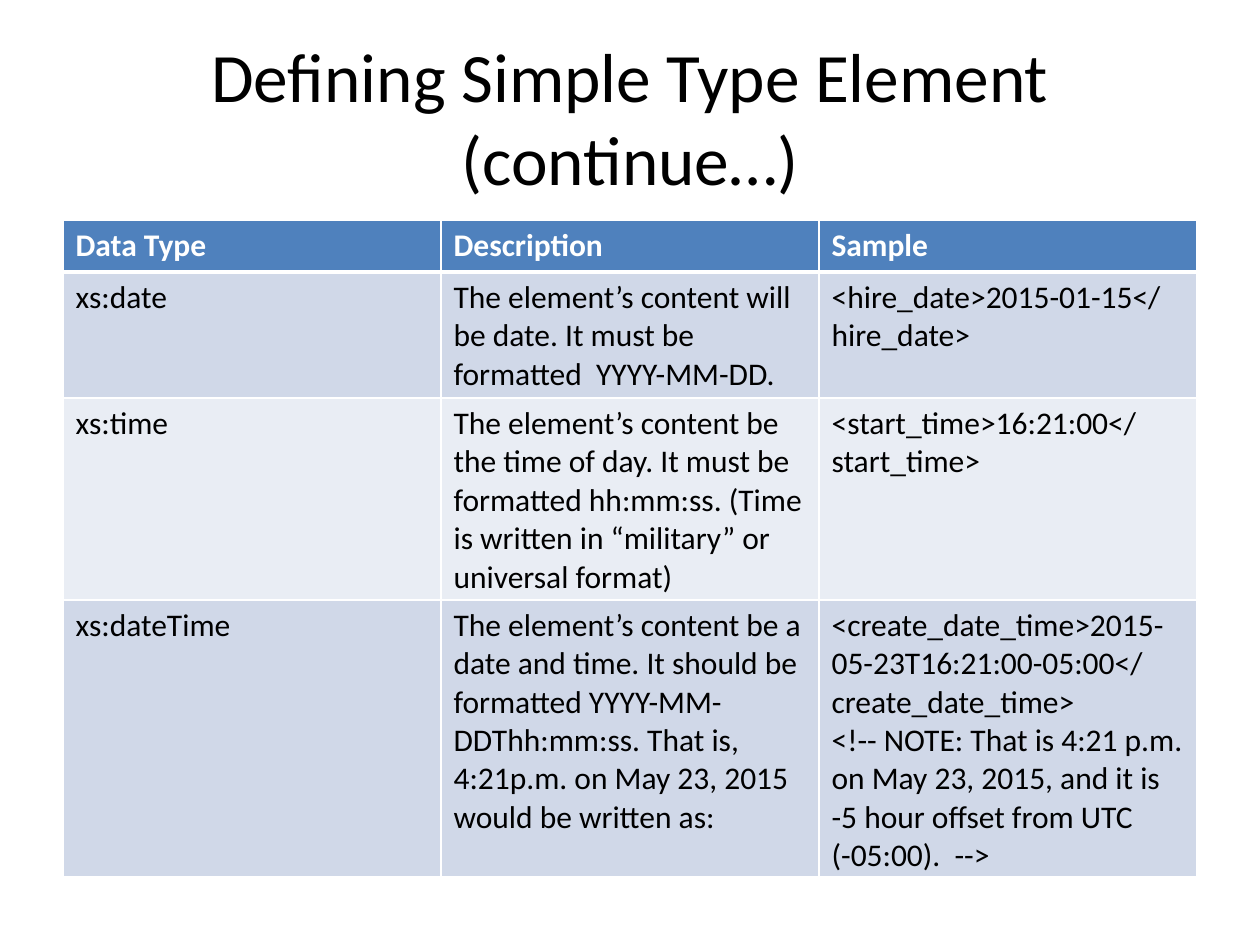
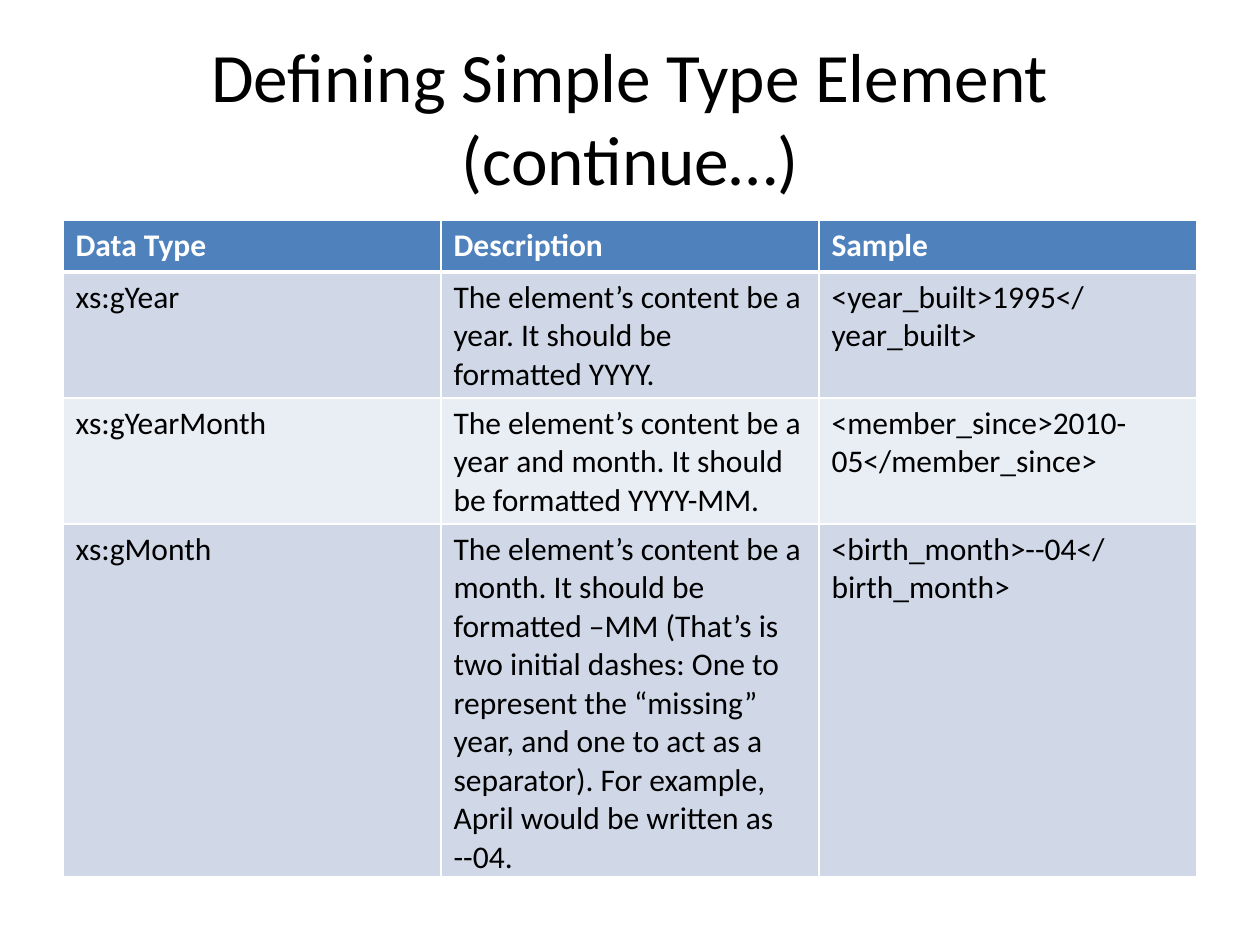
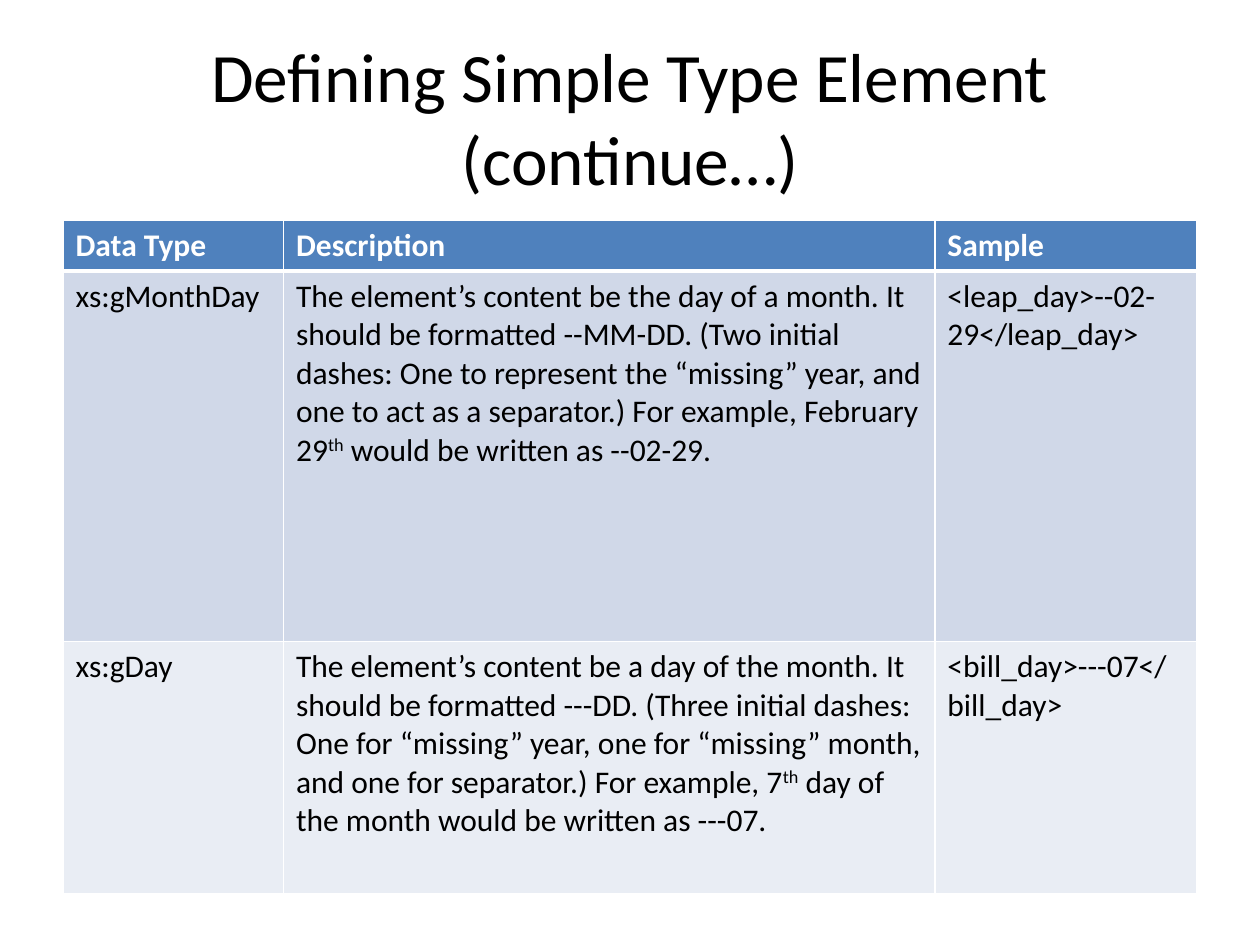
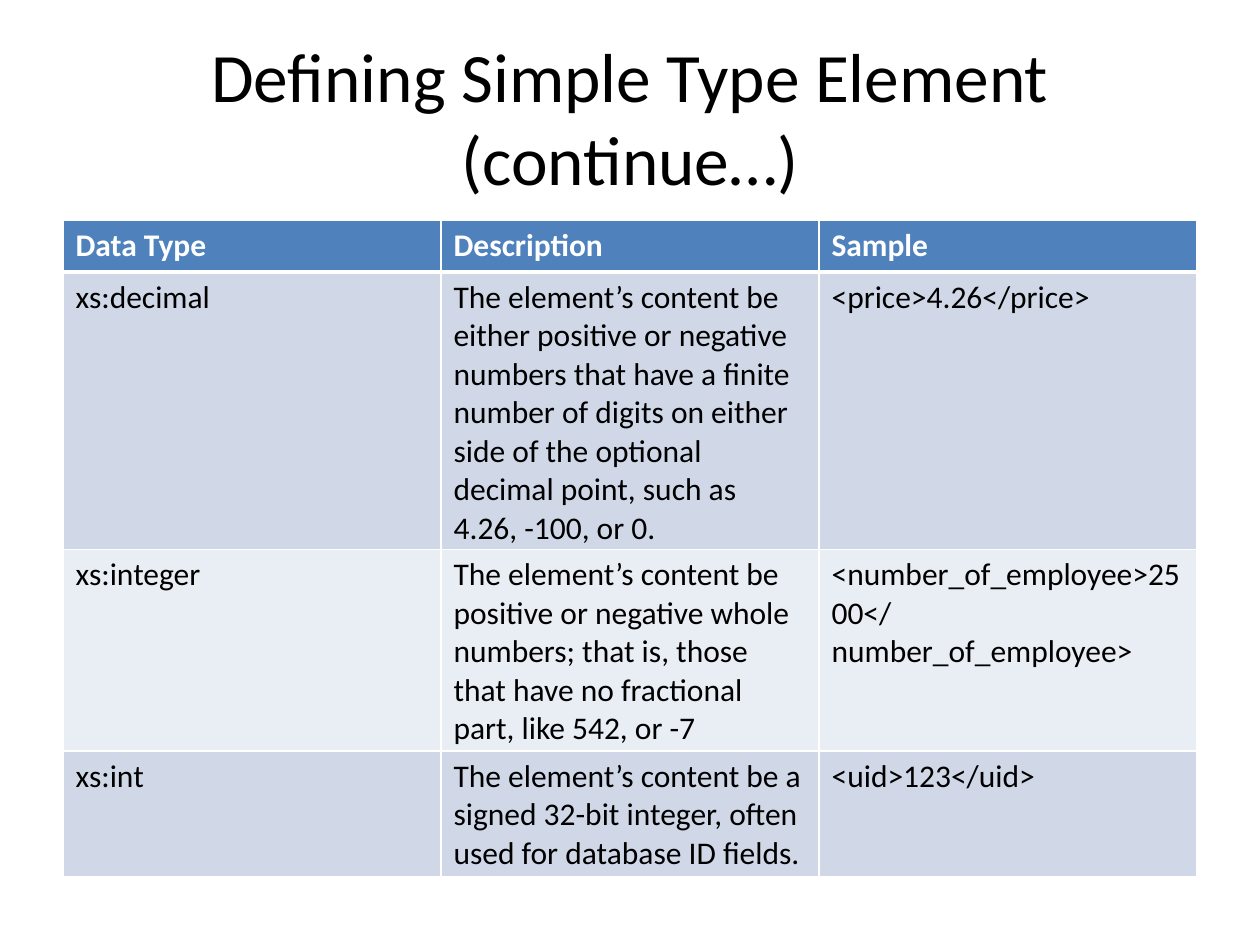
from dataclasses import dataclass

from lxml.etree import SubElement
from pptx import Presentation
from pptx.dml.color import RGBColor as RGB
from pptx.enum.text import MSO_ANCHOR as ANCHOR, PP_ALIGN as ALIGN
from pptx.oxml.ns import qn
from pptx.util import Inches, Pt


@dataclass(frozen=True)
class Theme:
    """Colours, font and sizes shared by all slides."""

    font: str = "Calibri"
    title_size: float = 39.6
    cell_size: float = 18
    text: str = "000000"
    white: str = "FFFFFF"
    header: str = "4F81BD"
    bands: tuple = ("D0D8E8", "E9EDF4")
    rule: float = 1
    header_rule: float = 3


THEME = Theme()
TITLE = "Defining Simple Type Element (continue…)"
HEADINGS = ("Data Type", "Description", "Sample")
TITLE_BOX = (0.5, 0.3, 9, 1.25)
TABLE_BOX = (0.5, 1.75, 9)
EVEN_COLS = (3, 3, 3)
FIT_ROWS = (0.41,) * 4

DATES = [
    ("xs:date",
     "The element’s content will be date. It must be formatted  YYYY-MM-DD.",
     "<hire_date>2015-01-15</hire_date>"),
    ("xs:time",
     "The element’s content be the time of day. It must be formatted hh:mm:ss. "
     "(Time is written in “military” or universal format)",
     "<start_time>16:21:00</start_time>"),
    ("xs:dateTime",
     "The element’s content be a date and time. It should be formatted "
     "YYYY-MM-DDThh:mm:ss. That is, 4:21p.m. on May 23, 2015 would be written as:",
     "<create_date_time>2015-05-23T16:21:00-05:00</create_date_time>\n"
     "<!-- NOTE: That is 4:21 p.m. on May 23, 2015, and it is -5 hour offset "
     "from UTC (-05:00).  -->"),
]
YEARS = [
    ("xs:gYear",
     "The element’s content be a year. It should be formatted YYYY.",
     "<year_built>1995</year_built>"),
    ("xs:gYearMonth",
     "The element’s content be a year and month. It should be formatted YYYY-MM.",
     "<member_since>2010-05</member_since>"),
    ("xs:gMonth",
     "The element’s content be a month. It should be formatted –MM (That’s is two "
     "initial dashes: One to represent the “missing” year, and one to act as a "
     "separator). For example, April would be written as --04.",
     "<birth_month>--04</birth_month>"),
]
DAYS = [
    ("xs:gMonthDay",
     "The element’s content be the day of a month. It should be formatted --MM-DD. "
     "(Two initial dashes: One to represent the “missing” year, and one to act as a "
     "separator.) For example, February 29^th^ would be written as --02-29.",
     "<leap_day>--02-29</leap_day>"),
    ("xs:gDay",
     "The element’s content be a day of the month. It should be formatted ---DD. "
     "(Three initial dashes: One for “missing” year, one for “missing” month, and "
     "one for separator.) For example, 7^th^ day of the month would be written as "
     "---07.",
     "<bill_day>---07</bill_day>"),
]
NUMBERS = [
    ("xs:decimal",
     "The element’s content be either positive or negative numbers that have a "
     "finite number of digits on either side of the optional decimal point, such as "
     "4.26, -100, or 0.",
     "<price>4.26</price>"),
    ("xs:integer",
     "The element’s content be positive or negative whole numbers; that is, those "
     "that have no fractional part, like 542, or -7",
     "<number_of_employee>2500</number_of_employee>"),
    ("xs:int",
     "The element’s content be a signed 32-bit integer, often used for database ID "
     "fields.",
     "<uid>123</uid>"),
]
SLIDES = [
    (DATES, EVEN_COLS, FIT_ROWS),
    (YEARS, EVEN_COLS, FIT_ROWS),
    (DAYS, (1.75, 5.17, 2.08), (0.38, 2.94, 2)),
    (NUMBERS, EVEN_COLS, FIT_ROWS),
]


def write(tf, text, size, color, bold=False, align=ALIGN.LEFT):
    """Write one paragraph per line, with text between carets as superscript."""
    for i, line in enumerate(text.split("\n")):
        p = tf.add_paragraph() if i else tf.paragraphs[0]
        p.alignment = align
        for j, part in enumerate(line.split("^")):
            r = p.add_run()
            r.text = part
            r.font.name = THEME.font
            r.font.size = Pt(size)
            r.font.bold = bold
            r.font.color.rgb = RGB.from_string(color)
            if j % 2:
                r._r.get_or_add_rPr().set("baseline", "30000")


def add_title(s, box):
    """Place the centred slide title in the box."""
    tf = s.shapes.add_textbox(*map(Inches, box)).text_frame
    tf.word_wrap = True
    tf.vertical_anchor = ANCHOR.MIDDLE
    write(tf, TITLE, THEME.title_size, THEME.text, align=ALIGN.CENTER)


def set_borders(cell, top, bottom):
    """Draw white borders with the given top and bottom widths."""
    tc_pr = cell._tc.get_or_add_tcPr()
    widths = {"L": THEME.rule, "R": THEME.rule, "T": top, "B": bottom}
    for side, width in widths.items():
        ln = SubElement(tc_pr, qn(f"a:ln{side}"), w=str(Pt(width)))
        fill = SubElement(ln, qn("a:solidFill"))
        SubElement(fill, qn("a:srgbClr"), val=THEME.white)


def add_type_table(s, box, types, cols, heights):
    """Place a table of data types under the shared headings."""
    left, top, width = box
    rows = [HEADINGS, *types]
    table = s.shapes.add_table(
        len(rows), len(cols), Inches(left), Inches(top),
        Inches(width), Inches(sum(heights))).table
    for col, w in zip(table.columns, cols):
        col.width = Inches(w)
    for i, (row, h, texts) in enumerate(zip(table.rows, heights, rows)):
        row.height = Inches(h)
        head = i == 0
        fill = THEME.header if head else THEME.bands[(i - 1) % 2]
        color = THEME.white if head else THEME.text
        over = THEME.header_rule if i == 1 else THEME.rule
        under = THEME.header_rule if head else THEME.rule
        for cell, text in zip(row.cells, texts):
            set_borders(cell, over, under)
            cell.fill.solid()
            cell.fill.fore_color.rgb = RGB.from_string(fill)
            write(cell.text_frame, text, THEME.cell_size, color, head)


def main():
    """Build and save the presentation."""
    prs = Presentation()
    prs.slide_width, prs.slide_height = Inches(10), Inches(7.5)
    for types, cols, heights in SLIDES:
        s = prs.slides.add_slide(prs.slide_layouts[6])
        add_title(s, TITLE_BOX)
        add_type_table(s, TABLE_BOX, types, cols, heights)
    prs.save("out.pptx")


if __name__ == "__main__":
    main()
